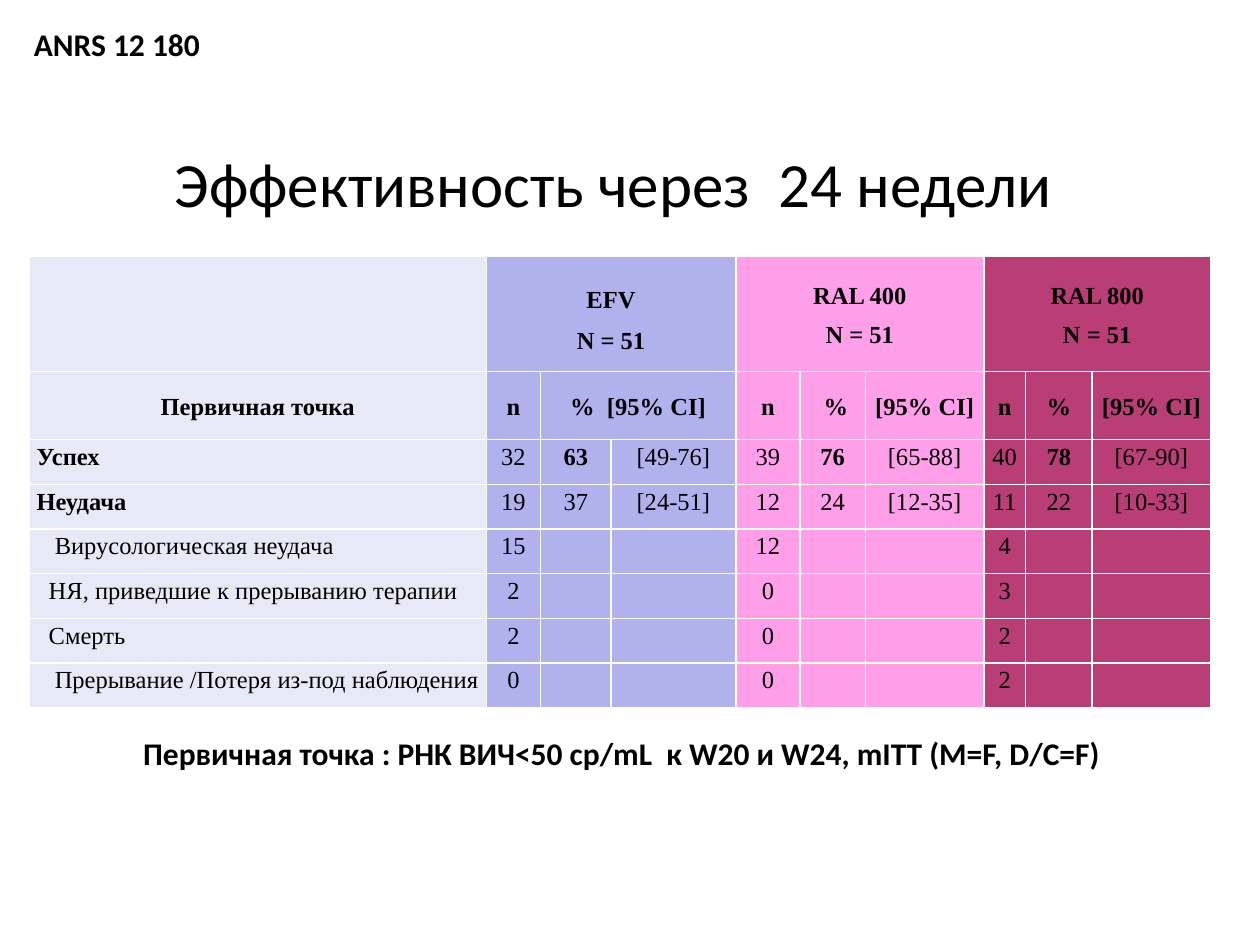
from dataclasses import dataclass

from lxml.etree import SubElement
from pptx import Presentation
from pptx.dml.color import RGBColor
from pptx.enum.text import MSO_ANCHOR, PP_ALIGN
from pptx.oxml.ns import qn
from pptx.util import Inches, Pt


@dataclass(frozen=True)
class Theme:
    heading_font: str = "Calibri"
    table_font: str = "Times New Roman"
    title_size: int = 36
    note_size: int = 18
    table_size: int = 14
    text: str = "000000"
    border: str = "FFFFFF"
    label_fill: str = "E8E8F6"
    group_fills: tuple = ("B1B2ED", "FF9FEA", "B83E75")


GRID_COLUMNS, GRID_ROWS = 100, 75
COLUMN_WIDTHS = (36.3, 4.3, 5.6, 9.9, 5.1, 5.2, 9.4, 3.3, 5.3, 9.4)
ROW_HEIGHTS = (9.2, 5.4) + (3.55,) * 6
GROUP_SIZE = 3
GROUPS = (("EFV\vN = 51",), ("RAL 400", "N = 51"), ("RAL 800", "N = 51"))
HEADINGS = ("Первичная точка", "n", "%  [95% CI]", "", "n", " %", "[95% CI]", "n", "%", "[95% CI]")
RESULTS = (
    ("Успех", 0, ("32", "63", "[49-76]", "39", "76", "[65-88]", "40", "78", "[67-90]")),
    ("Неудача", 0, ("19", "37", "[24-51]", "12", "24", "[12-35]", "11", "22", "[10-33]")),
    ("Вирусологическая неудача", 1.45, ("15", "", "", "12", "", "", "4", "", "")),
    ("НЯ, приведшие к прерыванию терапии", 0.97, ("2", "", "", "0", "", "", "3", "", "")),
    ("Смерть", 0.97, ("2", "", "", "0", "", "", "2", "", "")),
    ("Прерывание /Потеря из-под наблюдения", 1.45, ("0", "", "", "0", "", "", "2", "", "")),
)


class SlideBuilder:
    def __init__(self, presentation, theme):
        self.theme = theme
        self.column = presentation.slide_width / GRID_COLUMNS
        self.row = presentation.slide_height / GRID_ROWS
        self.slide = presentation.slides.add_slide(presentation.slide_layouts[6])

    def across(self, columns):
        return round(columns * self.column)

    def down(self, rows):
        return round(rows * self.row)

    def area(self, left, top, width, height):
        return self.across(left), self.down(top), self.across(width), self.down(height)

    def run(self, paragraph, text, font, size, bold):
        run = paragraph.add_run()
        run.text = text
        run.font.name = font
        run.font.size = Pt(size)
        run.font.bold = bold
        run.font.color.rgb = RGBColor.from_string(self.theme.text)

    def text(self, area, text, size, bold=True, align=PP_ALIGN.CENTER,
             anchor=MSO_ANCHOR.TOP, wrap=True):
        frame = self.slide.shapes.add_textbox(*self.area(*area)).text_frame
        frame.word_wrap = wrap
        frame.vertical_anchor = anchor
        paragraph = frame.paragraphs[0]
        paragraph.alignment = align
        self.run(paragraph, text, self.theme.heading_font, size, bold)

    def table(self, left, top, widths, heights):
        area = self.area(left, top, sum(widths), sum(heights))
        table = self.slide.shapes.add_table(len(heights), len(widths), *area).table
        table.first_row = table.horz_banding = False
        for column, width in zip(table.columns, widths):
            column.width = self.across(width)
        for row, height in zip(table.rows, heights):
            row.height = self.down(height)
            for index, cell in enumerate(row.cells):
                self.cell_style(cell, index)
        return table

    def cell_style(self, cell, column):
        cell.margin_left = cell.margin_right = Inches(0.06)
        cell.margin_top = cell.margin_bottom = 0
        properties = cell._tc.get_or_add_tcPr()
        for side in ("lnL", "lnR", "lnT", "lnB"):
            line = SubElement(properties, qn(f"a:{side}"), w=str(Pt(1)))
            fill = SubElement(line, qn("a:solidFill"))
            SubElement(fill, qn("a:srgbClr"), val=self.theme.border)
        cell.fill.solid()
        group = (column - 1) // GROUP_SIZE
        color = self.theme.group_fills[group] if column else self.theme.label_fill
        cell.fill.fore_color.rgb = RGBColor.from_string(color)

    def cell_text(self, cell, lines, bold=False, align=PP_ALIGN.CENTER,
                  anchor=MSO_ANCHOR.TOP, spacing=1.15, before=4, indent=0):
        cell.vertical_anchor = anchor
        frame = cell.text_frame
        for index, line in enumerate(lines):
            paragraph = frame.add_paragraph() if index else frame.paragraphs[0]
            paragraph.alignment = align
            paragraph.line_spacing = spacing
            paragraph.space_before = Pt(before)
            paragraph.space_after = Pt(4)
            if indent:
                paragraph._p.get_or_add_pPr().set("marL", str(self.across(indent)))
            for part, text in enumerate(line.split("\v")):
                if part:
                    paragraph.add_line_break()
                self.run(paragraph, text, self.theme.table_font, self.theme.table_size, bold)


def fill_results(builder, table):
    for group, lines in enumerate(GROUPS):
        first = 1 + group * GROUP_SIZE
        table.cell(0, first).merge(table.cell(0, first + GROUP_SIZE - 1))
        builder.cell_text(table.cell(0, first), lines, bold=True, anchor=MSO_ANCHOR.MIDDLE,
                          spacing=1.15 if len(lines) > 1 else 1.5, before=0)
    table.cell(1, 2).merge(table.cell(1, 3))
    for column, heading in enumerate(HEADINGS):
        if heading:
            builder.cell_text(table.cell(1, column), [heading], bold=True, anchor=MSO_ANCHOR.MIDDLE)
    for row, (label, indent, values) in enumerate(RESULTS, start=2):
        builder.cell_text(table.cell(row, 0), [label], bold=not indent,
                          align=PP_ALIGN.LEFT, indent=indent)
        for column, value in enumerate(values, start=1):
            if value:
                is_success_rate = row == 2 and column % GROUP_SIZE == 2
                builder.cell_text(table.cell(row, column), [value], bold=is_success_rate)


def main():
    presentation = Presentation()
    presentation.slide_width, presentation.slide_height = Inches(10), Inches(7.5)
    theme = Theme()
    builder = SlideBuilder(presentation, theme)
    builder.text((6.2, 8.6, 85, 11.7), "Эффективность через  24 недели", theme.title_size,
                 bold=False, anchor=MSO_ANCHOR.MIDDLE)
    builder.text((3.1, 57.8, 92.5, 4),
                 "Первичная точка : РНК ВИЧ<50 cp/mL  к W20 и W24, mITT (M=F, D/C=F)", theme.note_size)
    builder.text((1.7, 1.5, 15.4, 4), "ANRS 12 180", theme.note_size,
                 align=PP_ALIGN.LEFT, wrap=False)
    fill_results(builder, builder.table(2.3, 20.3, COLUMN_WIDTHS, ROW_HEIGHTS))
    presentation.save("out.pptx")


if __name__ == "__main__":
    main()
